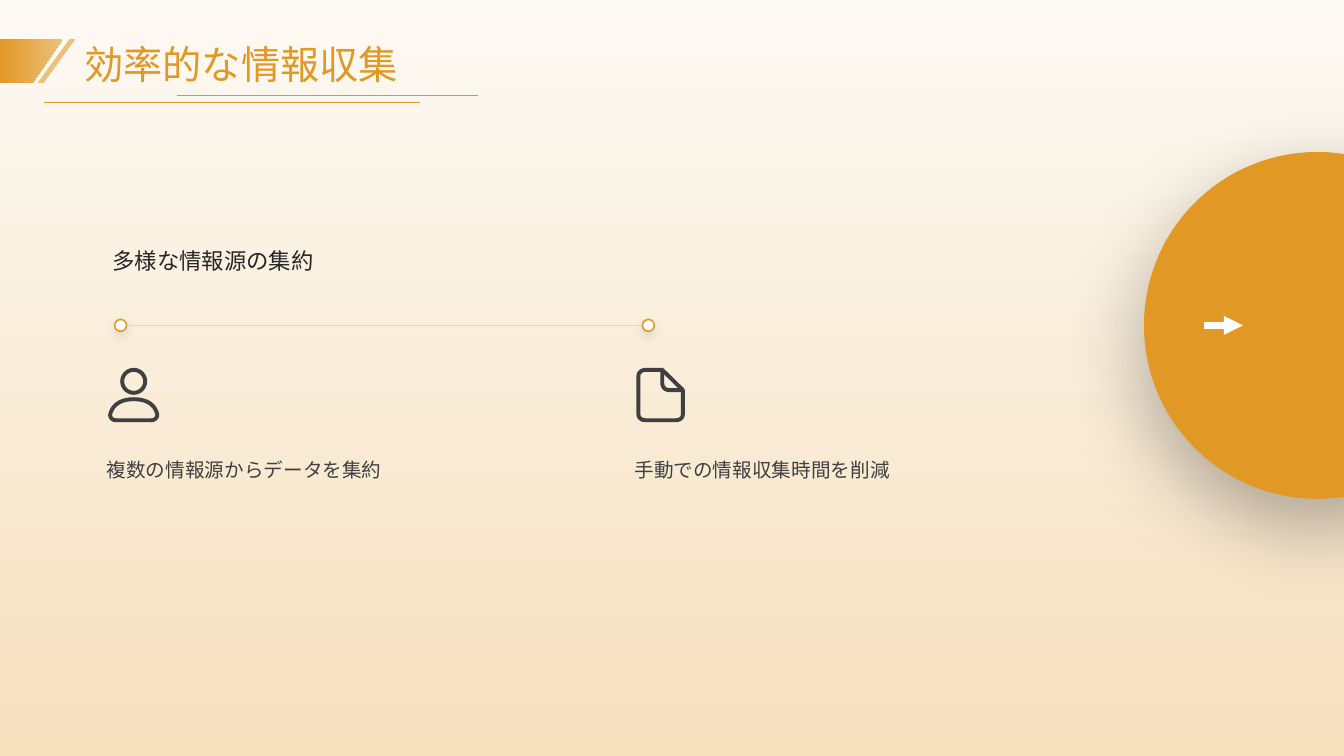
from dataclasses import dataclass

from lxml.etree import SubElement
from pptx import Presentation
from pptx.dml.color import RGBColor
from pptx.enum.shapes import MSO_CONNECTOR, MSO_SHAPE
from pptx.enum.text import MSO_ANCHOR, PP_ALIGN
from pptx.oxml.ns import qn
from pptx.util import Cm, Pt


@dataclass(frozen=True)
class Theme:
    """Colours, type sizes and font of the slide."""
    accent: str = "E19825"
    accent_light: str = "EDC17C"
    white: str = "FFFFFF"
    rail: str = "D9D9D9"
    rule: str = "A0A0A0"
    heading: str = "262626"
    body: str = "404040"
    sky: str = "FDFAF4"
    sand: str = "F6E0BE"
    font: str = "Cambria"
    title_size: int = 28
    heading_size: int = 16
    body_size: int = 14
    icon_stroke: float = 2.8


THEME = Theme()
PERSON_BODY = [
    [(0.63, 0.79)],
    [(1.02, 0.79), (1.17, 0.97), (1.22, 1.16)],
    [(1.24, 1.24), (1.17, 1.32), (1.07, 1.32)],
    [(0.18, 1.32)],
    [(0.08, 1.32), (0.02, 1.24), (0.04, 1.16)],
    [(0.09, 0.97), (0.25, 0.79), (0.63, 0.79)],
]
SHEET = [
    [(0.65, 0.05)], [(0.23, 0.05)],
    [(0.13, 0.05), (0.05, 0.12), (0.05, 0.2)], [(0.05, 1.17)],
    [(0.05, 1.26), (0.13, 1.32), (0.23, 1.32)], [(0.99, 1.32)],
    [(1.09, 1.32), (1.17, 1.26), (1.17, 1.17)], [(1.17, 0.56)],
]
FOLD = [
    [(0.65, 0.05)], [(0.65, 0.38)],
    [(0.65, 0.48), (0.72, 0.56), (0.82, 0.56)], [(1.17, 0.56)],
]


def color(value):
    """Return the colour for a hex value."""
    return RGBColor.from_string(value)


def fill_gradient(fill, start, end, angle):
    """Give a fill a gradient of two colours."""
    fill.gradient()
    fill.gradient_angle = angle
    for stop, value in zip(fill.gradient_stops, (start, end)):
        stop.color.rgb = color(value)


def style(shape, fill=None, line=None, stroke=1.0):
    """Set the fill and line of a shape and drop its shadow."""
    shape.shadow.inherit = False
    if fill:
        shape.fill.solid()
        shape.fill.fore_color.rgb = color(fill)
    else:
        shape.fill.background()
    if line:
        shape.line.color.rgb = color(line)
        shape.line.width = Pt(stroke)
    else:
        shape.line.fill.background()


def add_preset(page, kind, left, top, width, height, **look):
    """Add a styled preset shape."""
    shape = page.shapes.add_shape(kind, Cm(left), Cm(top), Cm(width), Cm(height))
    style(shape, **look)
    return shape


def add_shadow(shape, opacity, blur, distance):
    """Cast a soft black shadow below a shape."""
    effects = shape.element.spPr.find(qn("a:effectLst"))
    shadow = SubElement(effects, qn("a:outerShdw"), blurRad=str(Pt(blur)),
                        dist=str(Pt(distance)), dir="5400000", algn="t", rotWithShape="0")
    black = SubElement(shadow, qn("a:srgbClr"), val="000000")
    SubElement(black, qn("a:alpha"), val=str(opacity * 1000))


def add_rule(page, left, right, top, line, stroke, arrow=False):
    """Add a horizontal line, with an arrowhead if asked."""
    rule = page.shapes.add_connector(MSO_CONNECTOR.STRAIGHT, Cm(left), Cm(top), Cm(right), Cm(top))
    rule.line.color.rgb = color(line)
    rule.line.width = Pt(stroke)
    properties = rule.element.spPr
    if arrow:
        SubElement(properties.find(qn("a:ln")), qn("a:tailEnd"), type="triangle")
    SubElement(properties, qn("a:effectLst"))


def trace(segments, steps=10):
    """Turn points and cubic curves into a list of points."""
    points = []
    for segment in segments:
        if len(segment) == 1:
            points.append(segment[0])
            continue
        controls = [points[-1], *segment]
        for step in range(1, steps + 1):
            t = step / steps
            weights = ((1 - t) ** 3, 3 * t * (1 - t) ** 2, 3 * t * t * (1 - t), t ** 3)
            points.append([sum(weight * control[axis] for weight, control in zip(weights, controls))
                           for axis in (0, 1)])
    return points


def add_outline(page, left, top, points, close=True, **look):
    """Add a styled freeform through points given in centimetres from a corner."""
    units = [(round(x * 1000), round(y * 1000)) for x, y in points]
    builder = page.shapes.build_freeform(*units[0], scale=Cm(1) / 1000)
    builder.add_line_segments(units[1:], close=close)
    outline = builder.convert_to_shape(Cm(left), Cm(top))
    style(outline, **look)
    return outline


def format_text(shape, text, size, ink, spacing, anchor, margins=(0, 0, 0, 0)):
    """Write one paragraph in a shape and format it."""
    frame = shape.text_frame
    frame.word_wrap = True
    frame.vertical_anchor = anchor
    frame.margin_left, frame.margin_top, frame.margin_right, frame.margin_bottom = map(Cm, margins)
    para = frame.paragraphs[0]
    para.text = text
    para.alignment = PP_ALIGN.LEFT
    para.line_spacing = spacing
    para.font.name = THEME.font
    para.font.size = Pt(size)
    para.font.color.rgb = color(ink)


def add_text(page, left, top, width, height, *details):
    """Add a formatted text box."""
    format_text(page.shapes.add_textbox(Cm(left), Cm(top), Cm(width), Cm(height)), *details)


def build_header(page, top, height):
    """Place the title, its ribbon and its two rules."""
    title = page.shapes.title
    title.left, title.top, title.width, title.height = map(Cm, (2.13, top - 0.08, 29.87, 1.3))
    format_text(title, "効率的な情報収集", THEME.title_size, THEME.accent, 1.1, MSO_ANCHOR.MIDDLE)
    slash = add_preset(page, MSO_SHAPE.PARALLELOGRAM, 0.95, top, 0.95, height, fill=THEME.accent_light)
    slash.adjustments[0] = 0.84
    ribbon = add_outline(page, 0, top, [(0, 0), (1.58, 0), (0.82, height), (0, height)])
    fill_gradient(ribbon.fill, THEME.accent, THEME.accent_light, 0)
    add_rule(page, 1.11, 10.59, top + 1.58, THEME.accent, 0.5)
    add_rule(page, 4.45, 12.04, top + 1.42, THEME.rule, 0.5)


def build_disc(page, left, top, size):
    """Place the large disc at the edge with its arrow."""
    disc = add_preset(page, MSO_SHAPE.OVAL, left, top, size, size, fill=THEME.accent)
    add_shadow(disc, 30, 60, 20)
    add_rule(page, left + 1.5, left + 2.49, top + size / 2, THEME.white, 4.5, arrow=True)


def draw_person(page, left, top, **look):
    """Draw the person icon."""
    add_preset(page, MSO_SHAPE.OVAL, left + 0.34, top + 0.05, 0.58, 0.58, **look)
    add_outline(page, left, top, trace(PERSON_BODY), **look)


def draw_document(page, left, top, **look):
    """Draw the document icon."""
    add_outline(page, left, top, trace(SHEET), **look)
    add_outline(page, left, top, trace(FOLD), close=False, **look)


def build_timeline(page, left, top, pitch):
    """Place the heading, the rail and a column for each point."""
    add_text(page, left - 0.05, top - 4.68, 24.84, 3.38, "多様な情報源の集約",
             THEME.heading_size, THEME.heading, 1.5, MSO_ANCHOR.BOTTOM)
    add_rule(page, left + 0.2, left + pitch + 0.2, top, THEME.rail, 0.82)
    columns = ((draw_person, "複数の情報源からデータを集約"), (draw_document, "手動での情報収集時間を削減"))
    for index, (draw_icon, text) in enumerate(columns):
        column = left + index * pitch
        dot = add_preset(page, MSO_SHAPE.OVAL, column, top - 0.15, 0.3, 0.3,
                         fill=THEME.white, line=THEME.accent, stroke=1.1)
        add_shadow(dot, 11, 7, 3)
        draw_icon(page, column - 0.15, top + 1.07, line=THEME.body, stroke=THEME.icon_stroke)
        add_text(page, column - 0.2, top + 2.95, 11.1, 4.6, text, THEME.body_size,
                 THEME.body, 1.5, MSO_ANCHOR.TOP, (0, 0.1, 0.61, 0.1))


def main():
    """Build the slide and save the deck."""
    deck = Presentation()
    deck.slide_width, deck.slide_height = Cm(33.87), Cm(19.05)
    page = deck.slides.add_slide(deck.slide_layouts[5])
    fill_gradient(page.background.fill, THEME.sky, THEME.sand, 270)
    build_disc(page, 28.83, 3.83, 8.74)
    build_timeline(page, 2.89, 8.2, 13.3)
    build_header(page, 0.99, 1.1)
    deck.save("out.pptx")


if __name__ == "__main__":
    main()
